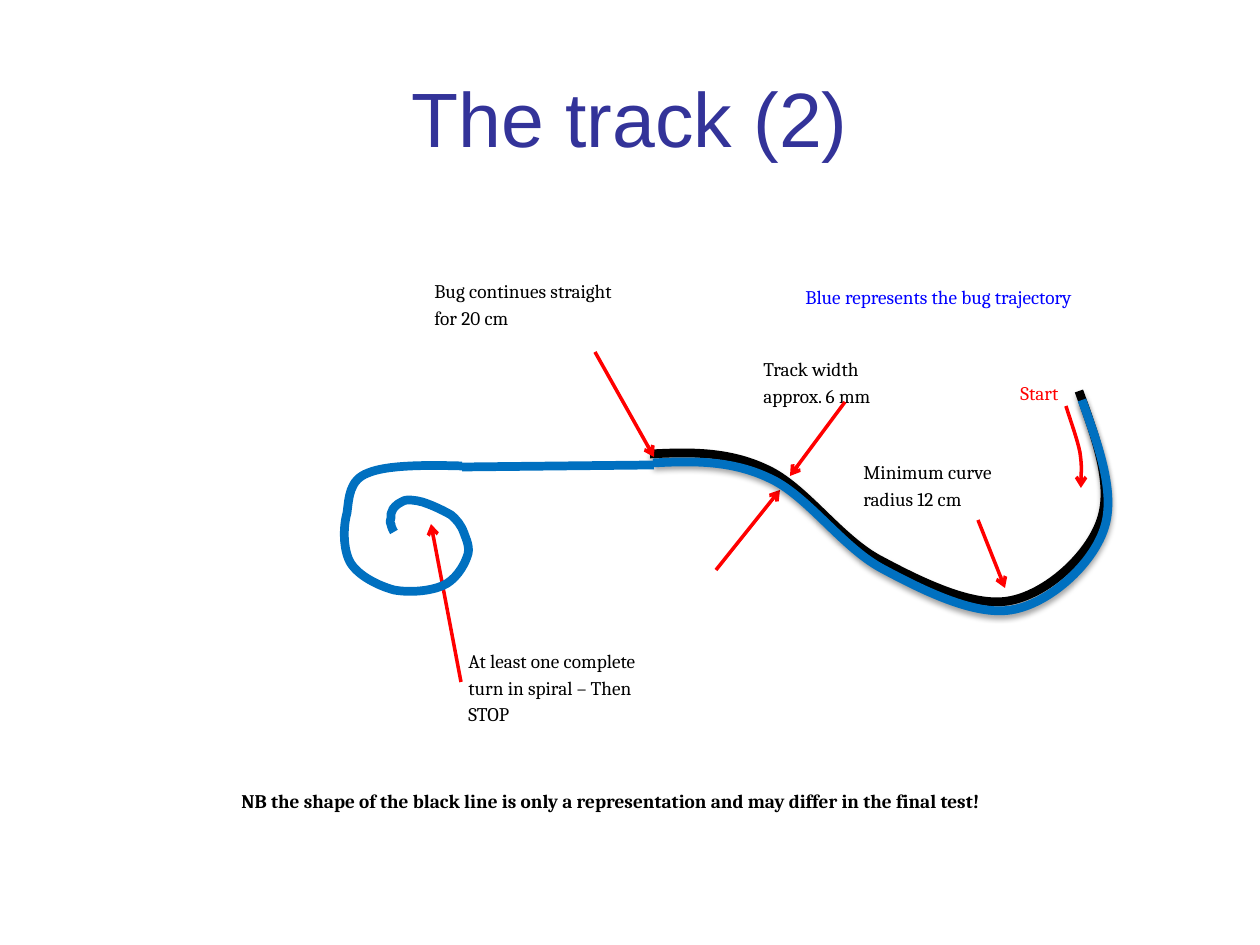
from dataclasses import dataclass

from lxml import etree
from pptx import Presentation, util as u
from pptx.dml.color import RGBColor
from pptx.enum import shapes, text
from pptx.oxml.ns import qn

PX = 914400 / 126
COLORS = {"title": "333399", "ink": "000000", "arrow": "FF0000",
          "bug": "0070C0", "bug_note": "0000FF"}
Point = tuple[int, int]


@dataclass
class Label:
    words: str
    box: tuple[int, int, int, int]
    color: str = "ink"
    bold: bool = False


@dataclass
class Straight:
    start: Point
    end: Point
    color: str = "arrow"
    width: int = 2
    arrow: bool = True


@dataclass
class Curve:
    """A start point followed by triples: two control points and an end."""
    points: list[Point]
    color: str
    width: int = 5
    arrow: bool = False
    shadow: bool = False


TITLE = Label("The track (2)", (63, 38, 1134, 158), "title")
TRACK = [(1079, 391),
         (1096, 438), (1113, 485), (1101, 520),
         (1089, 556), (1046, 595), (1008, 601),
         (971, 607), (919, 581), (878, 559),
         (838, 537), (804, 486), (766, 469),
         (728, 451), (689, 452), (650, 454)]
BUG_OFFSET = (3, 9)
BUG_PATH = [(x + BUG_OFFSET[0], y + BUG_OFFSET[1]) for x, y in TRACK]
START_ARROW = [(1066, 406),
               (1071, 422), (1077, 438), (1080, 452),
               (1082, 466), (1081, 476), (1081, 488)]
SPIRAL = [(462, 466),
          (425, 465), (387, 465), (368, 473),
          (349, 480), (349, 498), (347, 513),
          (343, 527), (343, 549), (350, 562),
          (358, 576), (379, 586), (394, 590),
          (410, 593), (430, 591), (442, 586),
          (455, 581), (464, 566), (467, 557),
          (471, 548), (466, 539), (464, 533),
          (461, 525), (457, 520), (451, 515),
          (446, 512), (436, 507), (428, 504),
          (421, 501), (413, 500), (408, 500),
          (403, 500), (401, 503), (398, 504),
          (396, 505), (394, 508), (393, 509),
          (392, 510), (392, 513), (391, 514),
          (391, 515), (391, 517), (391, 518),
          (391, 520), (389, 523), (391, 524),
          (391, 527), (394, 532), (394, 532)]

# Back to front
ELEMENTS = [
    Label("Minimum curve radius 12 cm", (851, 451, 176, 71)),
    Label("Track width approx. 6 mm", (751, 348, 161, 72)),
    Label("Start", (1008, 372, 82, 49), "arrow"),
    Straight((978, 520), (1005, 588)),
    Straight((845, 402), (790, 476)),
    Straight((716, 570), (780, 490)),
    Curve(TRACK, "ink", shadow=True),
    Curve(START_ARROW, "arrow", width=2, arrow=True),
    Label("NB the shape of the black line is only a representation "
          "and may differ in the final test!", (229, 780, 796, 39), bold=True),
    Label("Blue represents the bug trajectory", (793, 276, 379, 82), "bug_note"),
    Curve(BUG_PATH, "bug", shadow=True),
    Label("At least one complete turn in spiral – Then STOP", (456, 640, 228, 91)),
    Straight((461, 682), (431, 524)),
    Label("Bug continues straight for 20 cm", (422, 270, 228, 73)),
    Straight((595, 352), (654, 457)),
    Straight((654, 465), (462, 467), "bug", 5, arrow=False),
    Curve(SPIRAL, "bug"),
]


def emu(px: int) -> int:
    return round(px * PX)


def rgb(name: str) -> RGBColor:
    return RGBColor.from_string(COLORS[name])


def add_text(slide, label: Label):
    s = slide.shapes.add_textbox(*map(emu, label.box))
    tf = s.text_frame
    tf.word_wrap = True
    p = tf.paragraphs[0]
    p.text = label.words
    p.font.color.rgb = rgb(label.color)
    p.font.bold = label.bold
    return tf


def add_title(slide, label: Label) -> None:
    tf = add_text(slide, label)
    tf.vertical_anchor = text.MSO_ANCHOR.MIDDLE
    p = tf.paragraphs[0]
    p.alignment = text.PP_ALIGN.CENTER
    p.font.name, p.font.size = "Arial", u.Pt(44)


def add_label(slide, label: Label) -> None:
    p = add_text(slide, label).paragraphs[0]
    p.line_spacing, p.space_after = 1.15, u.Pt(10)
    p.font.name, p.font.size = "Cambria", u.Pt(11)


def style_line(s, item: Straight | Curve) -> None:
    s.line.color.rgb = rgb(item.color)
    s.line.width = u.Pt(item.width)
    if item.arrow:
        etree.SubElement(s.line._get_or_add_ln(), qn("a:tailEnd"), type="arrow")


def add_straight(slide, item: Straight) -> None:
    s = slide.shapes.add_connector(shapes.MSO_CONNECTOR.STRAIGHT,
                                   *map(emu, item.start + item.end))
    style_line(s, item)
    etree.SubElement(s._element.spPr, qn("a:effectLst"))


def add_curve(slide, item: Curve) -> None:
    """Build an outline through the end points, then bend each segment."""
    points = [(emu(x), emu(y)) for x, y in item.points]
    builder = slide.shapes.build_freeform(*points[0])
    builder.add_line_segments(points[3::3], close=False)
    s = builder.convert_to_shape()
    for i, segment in enumerate(list(s._element.iter(qn("a:lnTo")))):
        bezier = etree.Element(qn("a:cubicBezTo"))
        for x, y in points[3 * i + 1:3 * i + 4]:
            etree.SubElement(bezier, qn("a:pt"), x=str(x - s.left), y=str(y - s.top))
        segment.getparent().replace(segment, bezier)
    s.fill.background()
    style_line(s, item)
    s.shadow.inherit = False
    if item.shadow:
        add_shadow(s)


def add_shadow(s) -> None:
    effects = s._element.spPr.find(qn("a:effectLst"))
    shadow = etree.SubElement(effects, qn("a:outerShdw"), blurRad=str(u.Pt(3.1)),
                              dist=str(u.Pt(1.8)), dir="5400000", rotWithShape="0")
    color = etree.SubElement(shadow, qn("a:srgbClr"), val=COLORS["ink"])
    etree.SubElement(color, qn("a:alpha"), val="35000")


def main() -> None:
    prs = Presentation()
    prs.slide_width, prs.slide_height = emu(1260), emu(945)
    slide = prs.slides.add_slide(prs.slide_layouts[6])
    add_title(slide, TITLE)
    draw = {Label: add_label, Straight: add_straight, Curve: add_curve}
    for item in ELEMENTS:
        draw[type(item)](slide, item)
    prs.save("out.pptx")


if __name__ == "__main__":
    main()
